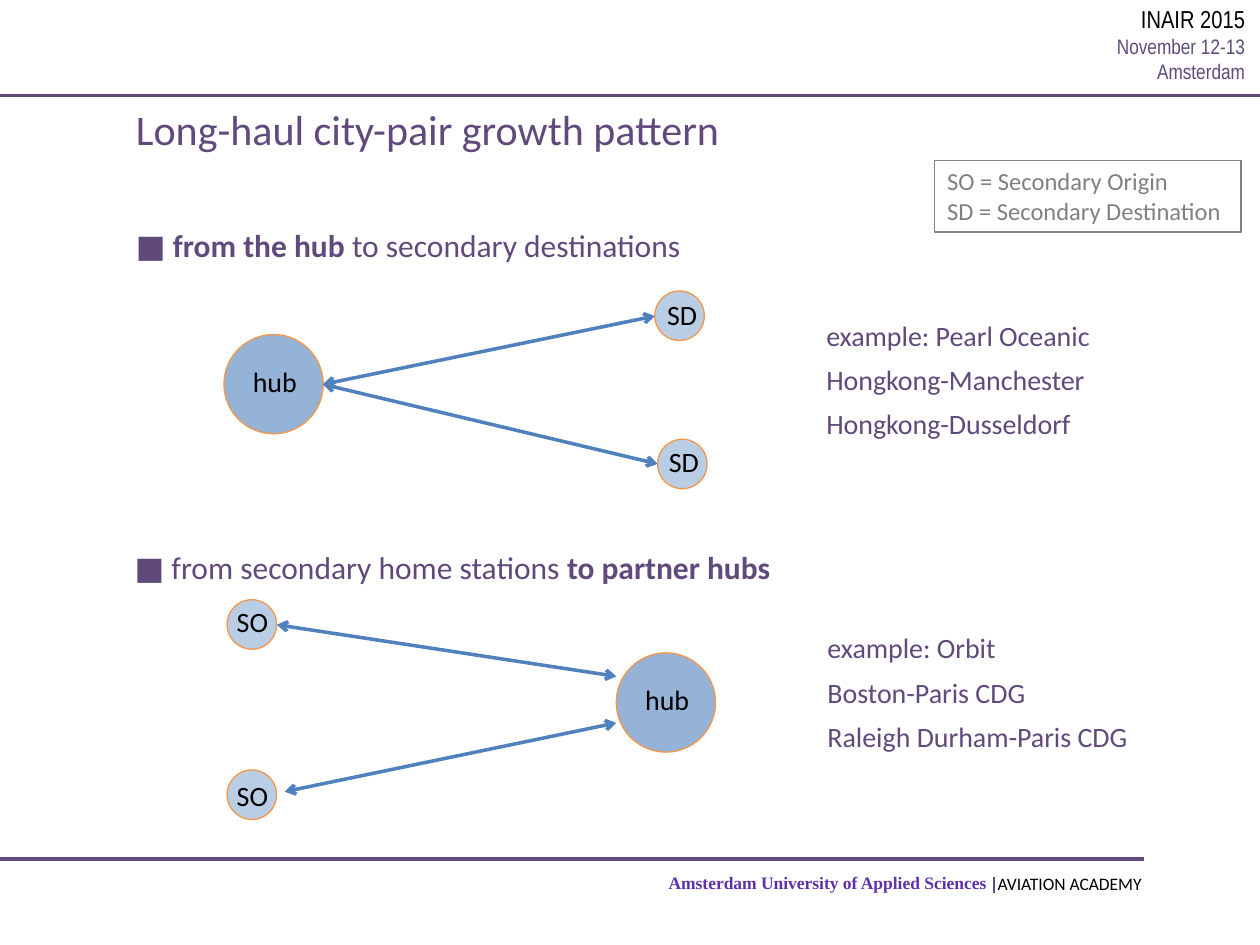
from lxml import etree
from pptx import Presentation
from pptx.dml.color import RGBColor
from pptx.enum.shapes import MSO_CONNECTOR, MSO_SHAPE
from pptx.enum.text import MSO_ANCHOR, MSO_AUTO_SIZE, PP_ALIGN
from pptx.oxml.ns import qn
from pptx.util import Pt

LINE = MSO_CONNECTOR.STRAIGHT
OVAL, RECT = MSO_SHAPE.OVAL, MSO_SHAPE.RECTANGLE
LEFT, RIGHT = PP_ALIGN.LEFT, PP_ALIGN.RIGHT
TOP, GROW = MSO_ANCHOR.TOP, MSO_AUTO_SIZE.SHAPE_TO_FIT_TEXT

COLORS = {
    "plum": "604A7B", "violet": "6031A9", "black": "000000", "grey": "808080",
    "hub": "95B3D7", "spoke": "B9CDE5", "rim": "F79646", "route": "4F81BD",
}
HUB, SPOKE = 56.7, 28.3


class Deck:
    """Holds the style and the current slide; all lengths are in points."""

    def __init__(self, wide, high):
        self.prs = Presentation()
        self.prs.slide_width, self.prs.slide_height = Pt(wide), Pt(high)
        self.slide = self.prs.slides.add_slide(self.prs.slide_layouts[6])
        self.shapes = self.slide.shapes
        self.base = {"name": "Calibri", "size": 16, "color": "black", "bold": False}

    def tint(self, name):
        return RGBColor.from_string(COLORS[name])

    def fill_text(self, shape, paras, align=LEFT, after=0, **style):
        """Write paras; each is a list of (text, format) runs."""
        frame = shape.text_frame
        for key, value in {"word_wrap": True, "auto_size": GROW,
                           "vertical_anchor": TOP}.items():
            setattr(frame, key, value)
        for i, runs in enumerate(paras):
            para = frame.add_paragraph() if i else frame.paragraphs[0]
            para.alignment = align
            para.space_after = Pt(after)
            for text, extra in runs:
                run = para.add_run()
                run.text = text
                form = {**self.base, **style, **extra}
                run.font.color.rgb = self.tint(form.pop("color"))
                form["size"] = Pt(form["size"])
                for key, value in form.items():
                    setattr(run.font, key, value)
        return frame

    def text(self, x, y, w, h, paras, **style):
        box = self.shapes.add_textbox(Pt(x), Pt(y), Pt(w), Pt(h))
        return self.fill_text(box, paras, **style)

    def shape(self, kind, x, y, w, h, edge, fill=None):
        item = self.shapes.add_shape(kind, Pt(x), Pt(y), Pt(w), Pt(h))
        item.shadow.inherit = False
        if fill:
            item.fill.solid()
            item.fill.fore_color.rgb = self.tint(fill)
        else:
            item.fill.background()
        item.line.color.rgb = self.tint(edge)
        item.line.width = Pt(0.75)
        return item

    def node(self, x, y, size, fill, label, dx, dy, wide):
        """Draw a circle with its label box shifted by dx, dy."""
        self.shape(OVAL, x, y, size, size, "rim", fill)
        self.text(x + dx, y + dy, wide, 26.6, [[(label, {})]])

    def line(self, x1, y1, x2, y2, color="plum", width=2, arrows=False):
        item = self.shapes.add_connector(LINE, Pt(x1), Pt(y1), Pt(x2), Pt(y2))
        item.line.color.rgb = self.tint(color)
        item.line.width = Pt(width)
        if arrows:
            pen = item.line._get_or_add_ln()
            for end in ("a:headEnd", "a:tailEnd"):
                etree.SubElement(pen, qn(end), type="arrow")
        etree.SubElement(item._element.spPr, qn("a:effectLst"))


def plain(*lines):
    return [[(line, {})] for line in lines]


def frame(deck):
    """Draw the header and footer."""
    deck.line(0, 491, 653.8, 491)
    deck.text(375, 494.8, 198.7, 19.4,
              plain("Amsterdam University of Applied Sciences"),
              name="Times New Roman", size=10, color="violet", bold=True)
    deck.line(0, 54.7, 720, 54.7)
    deck.text(557.3, -1.4, 161.3, 53.3,
              [[("INAIR 2015", {"size": 14, "color": "black"})],
               *plain("November 12-13", "Amsterdam")],
              align=RIGHT, name="Arial Narrow", size=12, color="plum")
    deck.text(563, 495.4, 102.2, 19.4, plain("AVIATION ACADEMY"), size=10)
    deck.line(568, 501.1, 568, 510.5, width=1)


def body(deck):
    head = deck.text(
        70.6, 55.4, 562.3, 127.4,
        [[("Long-haul city-pair growth pattern", {"size": 24})],
         [("■ ", {}), ("from the hub ", {"bold": True}),
          ("to secondary destinations", {})]],
        size=18, color="plum", after=6)
    head.paragraphs[0].space_after = Pt(41.3)
    deck.text(69.8, 309.6, 483, 28.8,
              [[("■ from secondary home stations ", {}),
                ("to partner hubs", {"bold": True})]], size=18, color="plum")

    for x, y in ((128, 191.2), (352.2, 373.1)):
        deck.node(x, y, HUB, "hub", "hub", 9.4, 13.5, 41.8)
    for x, y, label, dx, dy, wide in (
            (375.8, 251, "SD", -0.7, -0.5, 38.9),
            (374.2, 166.3, "SD", 0, 0, 33.1),
            (129.8, 342.7, "SO", -1.6, -0.7, 47.5),
            (129.8, 440, "SO", -1.6, 1.4, 47.5)):
        deck.node(x, y, SPOKE, "spoke", label, dx, dy, wide)

    for ends in ((184.6, 219.6, 374.2, 180.6), (184.6, 219.6, 375.8, 265.1),
                 (158.2, 357, 352.2, 386.5), (162.7, 452.4, 352.2, 413.1)):
        deck.line(*ends, color="route", arrows=True)

    key = deck.shape(RECT, 534.2, 91.6, 175, 41, "grey")
    deck.fill_text(key, plain("SO = Secondary Origin", "SD = Secondary Destination"),
                   size=14, color="grey")
    for x, y, lines in (
            (465.1, 178.6, ("example: Pearl Oceanic", "Hongkong-Manchester",
                            "Hongkong-Dusseldorf")),
            (465.8, 357, ("example: Orbit", "Boston-Paris CDG",
                          "Raleigh Durham-Paris CDG"))):
        deck.text(x, y, 201.6, 77.8, plain(*lines), color="plum", after=6)


def main():
    deck = Deck(720, 540)
    frame(deck)
    body(deck)
    deck.prs.save("out.pptx")


if __name__ == "__main__":
    main()
